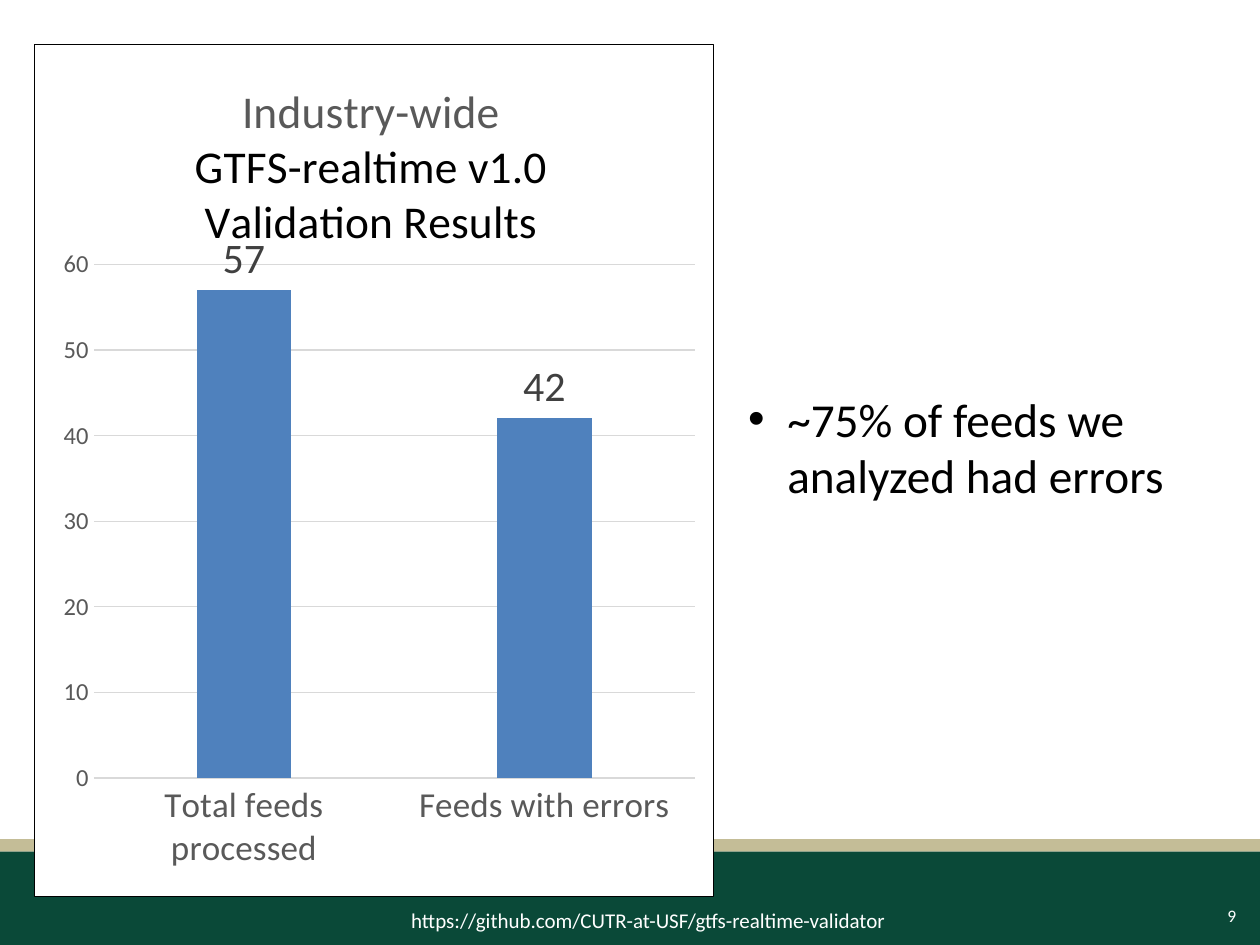
"""Build the slide on industry-wide GTFS-realtime validation results."""
from lxml import etree
from pptx import Presentation, util as u
from pptx.chart.data import CategoryChartData
from pptx.dml.color import RGBColor
from pptx.enum import chart as charts, shapes, text
from pptx.oxml import parse_xml
from pptx.oxml.ns import nsdecls, qn

FONT = "Calibri"
BANDS = [((0, 6.66, 10, 0.1), "C4BD97"), ((0, 6.76, 10, 0.74), "0A4938")]
TITLE_LINES = [("Industry-wide", "595959"), ("GTFS-realtime v1.0", "000000"),
               ("Validation Results", "000000")]
RESULTS = {"Total feeds processed": 57, "Feeds with errors": 42}
CHART_BOX = (0.27, 0.35, 5.4, 6.77)
TITLE_LAYOUT = {"x": 0.23, "y": 0.04}
PLOT_LAYOUT = {"x": 0.087, "y": 0.258, "w": 0.885, "h": 0.603}
LINK = "https://github.com/CUTR-at-USF/gtfs-realtime-validator"
FINDING = "~75% of feeds we analyzed had errors"


def color(value):
    return RGBColor.from_string(value)


def style(font, size, value):
    font.name, font.size, font.bold = FONT, u.Pt(size), False
    font.color.rgb = color(value)


def add_band(slide, box, fill):
    band = slide.shapes.add_shape(shapes.MSO_SHAPE.RECTANGLE, *map(u.Inches, box))
    band.shadow.inherit = False
    band.fill.solid()
    band.fill.fore_color.rgb = color(fill)
    band.line.fill.background()


def add_text(slide, box, content, size, value, alignment, bullet=False):
    frame = slide.shapes.add_textbox(*map(u.Inches, box)).text_frame
    frame.word_wrap = True
    frame.vertical_anchor = text.MSO_ANCHOR.MIDDLE
    paragraph = frame.paragraphs[0]
    paragraph.text = content
    paragraph.alignment = alignment
    if bullet:
        properties = paragraph._p.get_or_add_pPr()
        properties.set("marL", str(u.Inches(0.31)))
        properties.set("indent", str(-u.Inches(0.31)))
        etree.SubElement(properties, qn("a:buFont")).set("typeface", "Arial")
        etree.SubElement(properties, qn("a:buChar")).set("char", "•")
    style(paragraph.runs[0].font, size, value)


def set_layout(parent, index, layout, inner=False):
    for old in parent.findall(qn("c:layout")):
        parent.remove(old)
    target = '<c:layoutTarget val="inner"/>' if inner else ""
    modes = "".join(f'<c:{key}Mode val="edge"/>' for key in "xy")
    values = "".join(f'<c:{key} val="{value}"/>' for key, value in layout.items())
    parent.insert(index, parse_xml(
        f'<c:layout {nsdecls("c")}><c:manualLayout>{target}{modes}{values}'
        '</c:manualLayout></c:layout>'))


def format_axis(axis, size):
    axis.major_tick_mark = axis.minor_tick_mark = charts.XL_TICK_MARK.NONE
    style(axis.tick_labels.font, size, "595959")


def add_results_chart(slide):
    data = CategoryChartData()
    data.categories = list(RESULTS)
    data.add_series("Series 1", list(RESULTS.values()))
    chart = slide.shapes.add_chart(charts.XL_CHART_TYPE.COLUMN_CLUSTERED,
                                   *map(u.Inches, CHART_BOX), data).chart
    style(chart.font, 10, "000000")
    chart.has_legend = False

    frame = chart.chart_title.text_frame
    frame.text = "\n".join(line for line, _ in TITLE_LINES)
    for paragraph, (_, value) in zip(frame.paragraphs, TITLE_LINES):
        paragraph.alignment = text.PP_ALIGN.CENTER
        style(paragraph.runs[0].font, 26, value)
    set_layout(chart.chart_title._element, 1, TITLE_LAYOUT)
    space = chart._chartSpace
    set_layout(space.chart.plotArea, 0, PLOT_LAYOUT, inner=True)
    space.chart.addnext(parse_xml(
        f'<c:spPr {nsdecls("c", "a")}><a:solidFill><a:srgbClr val="FFFFFF"/></a:solidFill>'
        '<a:ln w="9525"><a:solidFill><a:srgbClr val="000000"/></a:solidFill></a:ln></c:spPr>'))

    format_axis(chart.category_axis, 20)
    format_axis(chart.value_axis, 14)
    chart.value_axis.minimum_scale, chart.value_axis.maximum_scale = 0, 60
    chart.value_axis.major_unit = 10
    chart.value_axis.format.line.fill.background()
    for item in (chart.category_axis, chart.value_axis.major_gridlines):
        item.format.line.color.rgb = color("D9D9D9")
        item.format.line.width = u.Pt(0.75)

    plot = chart.plots[0]
    plot.vary_by_categories = False
    plot.gap_width, plot.overlap = 219, -27
    series = plot.series[0]
    series.format.fill.solid()
    series.format.fill.fore_color.rgb = color("4F81BD")
    labels = series.data_labels
    labels.show_value = True
    labels.position = charts.XL_LABEL_POSITION.OUTSIDE_END
    style(labels.font, 24, "404040")


def main():
    presentation = Presentation()
    presentation.slide_width, presentation.slide_height = u.Inches(10), u.Inches(7.5)
    slide = presentation.slides.add_slide(presentation.slide_layouts[6])
    for box, fill in BANDS:
        add_band(slide, box, fill)
    add_text(slide, (8.81, 7.07, 1.1, 0.4), "9", 10, "FFFFFF", text.PP_ALIGN.RIGHT)
    add_results_chart(slide)
    add_text(slide, (1.75, 7.15, 6.79, 0.3), LINK, 12, "FFFFFF", text.PP_ALIGN.CENTER)
    add_text(slide, (5.84, 3.04, 4.07, 1.01), FINDING, 27, "000000",
             text.PP_ALIGN.LEFT, bullet=True)
    presentation.save("out.pptx")


if __name__ == "__main__":
    main()
